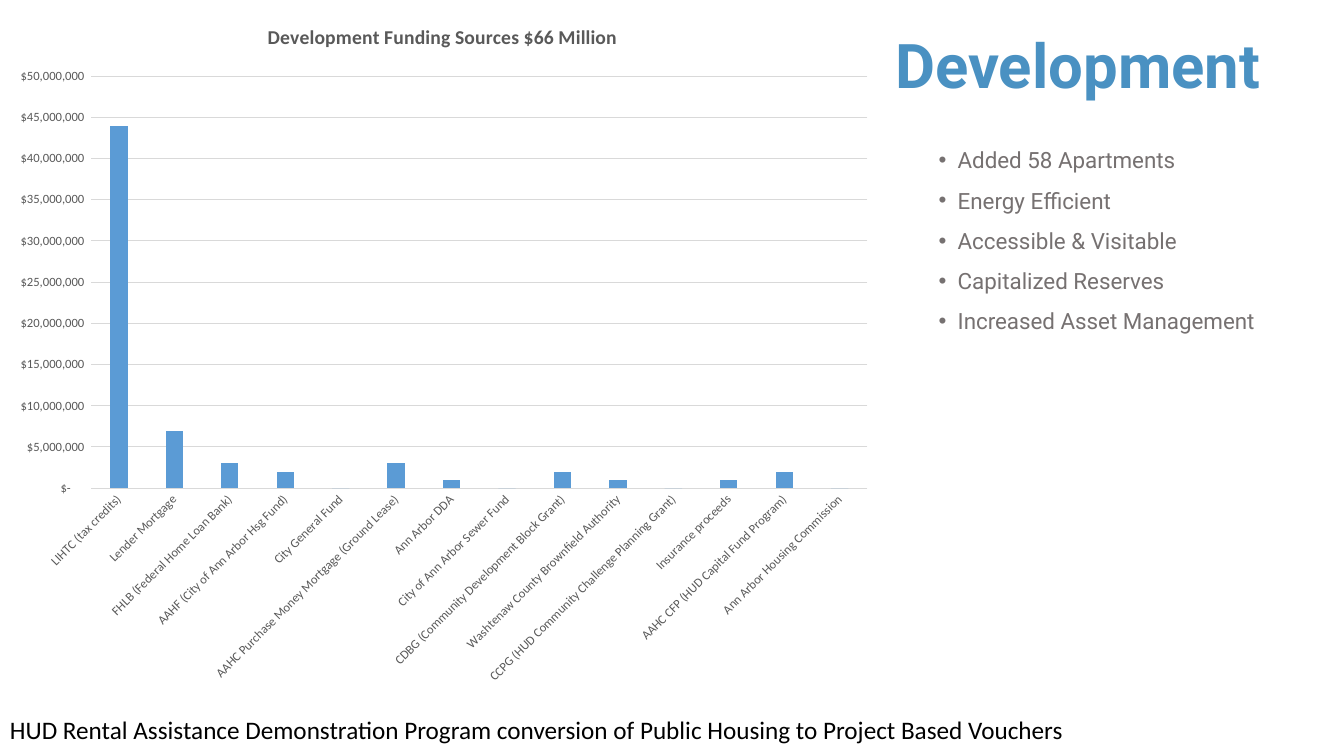
from dataclasses import dataclass

from lxml import etree
from pptx import Presentation
from pptx.chart.data import CategoryChartData
from pptx.dml.color import RGBColor
from pptx.enum import chart as charts, text as texts
from pptx.oxml import ns
from pptx.util import Inches, Pt


@dataclass(frozen=True)
class Theme:
    body_font: str = "Calibri"
    accent_font: str = "Roboto"
    black: str = "000000"
    heading: str = "4A91C2"
    bullet: str = "767171"
    chart_text: str = "595959"
    grid: str = "D9D9D9"
    bar: str = "5B9BD5"
    heading_size: int = 44
    footer_size: int = 18
    bullet_size: int = 16
    chart_title_size: int = 14
    chart_size: int = 10
    axis_size: int = 9


THEME = Theme()
MILLION = 1_000_000

FUNDING_MILLIONS = {
    "LIHTC (tax credits)": 44,
    "Lender Mortgage": 7,
    "FHLB (Federal Home Loan Bank)": 3,
    "AAHF (City of Ann Arbor Hsg Fund)": 2,
    "City General Fund": 0,
    "AAHC Purchase Money Mortgage (Ground Lease)": 3,
    "Ann Arbor DDA": 1,
    "City of Ann Arbor Sewer Fund": 0,
    "CDBG (Community Development Block Grant)": 2,
    "Washtenaw County Brownfield Authority": 1,
    "CCPG (HUD Community Challenge Planning Grant)": 0,
    "Insurance proceeds": 1,
    "AAHC CFP (HUD Capital Fund Program)": 2,
    "Ann Arbor Housing Commission": 0,
}
RESULTS = (
    "Added 58 Apartments",
    "Energy Efficient",
    "Accessible & Visitable",
    "Capitalized Reserves",
    "Increased Asset Management",
)
ACCOUNTING = r'_("$"* #,##0_);_("$"* \(#,##0\);_("$"* "-"??_);_(@_)'


def style_font(font, size, color, name=THEME.body_font, bold=False):
    font.name, font.size, font.bold = name, Pt(size), bold
    font.color.rgb = RGBColor.from_string(color)


def add_bullet(paragraph, indent=0.19):
    props = paragraph._p.get_or_add_pPr()
    props.set("marL", str(Inches(indent)))
    props.set("indent", str(-Inches(indent)))
    etree.SubElement(props, ns.qn("a:buFont")).set("typeface", "Arial")
    etree.SubElement(props, ns.qn("a:buChar")).set("char", "•")


def add_text(slide, content, box, bullets=False, align=None, spacing=None, **font):
    """Add a text box with one paragraph for each line of content."""
    frame = slide.shapes.add_textbox(*map(Inches, box)).text_frame
    frame.word_wrap = True
    frame.auto_size = texts.MSO_AUTO_SIZE.SHAPE_TO_FIT_TEXT
    frame.text = content
    for paragraph in frame.paragraphs:
        if spacing:
            paragraph.line_spacing = spacing
        paragraph.alignment = align
        if bullets:
            add_bullet(paragraph)
        for run in paragraph.runs:
            style_font(run.font, **font)


def place_plot(chart, **fractions):
    """Fix the inner plot area as fractions of the chart frame."""
    plot_area = chart.element.chart.plotArea
    for old in plot_area.findall(ns.qn("c:layout")):
        plot_area.remove(old)
    layout = etree.Element(ns.qn("c:layout"))
    manual = etree.SubElement(layout, ns.qn("c:manualLayout"))
    settings = {"layoutTarget": "inner", "xMode": "edge", "yMode": "edge", **fractions}
    for tag, value in settings.items():
        etree.SubElement(manual, ns.qn(f"c:{tag}")).set("val", str(value))
    plot_area.insert(0, layout)


def style_line(line, color):
    line.color.rgb = RGBColor.from_string(color)
    line.width = Pt(0.75)


def style_axes(chart):
    sources, dollars = chart.category_axis, chart.value_axis
    for axis in (sources, dollars):
        axis.major_tick_mark = axis.minor_tick_mark = charts.XL_TICK_MARK.NONE
        style_font(axis.tick_labels.font, THEME.axis_size, THEME.chart_text)
    style_line(sources.format.line, THEME.grid)
    label_body = chart.element.xpath(".//c:catAx/c:txPr/a:bodyPr")[0]
    label_body.set("rot", str(-45 * 60000))
    label_body.set("vert", "horz")

    dollars.minimum_scale, dollars.maximum_scale = 0, 50 * MILLION
    dollars.major_unit = 5 * MILLION
    dollars.format.line.fill.background()
    style_line(dollars.major_gridlines.format.line, THEME.grid)
    dollars.tick_labels.number_format = ACCOUNTING
    dollars.tick_labels.number_format_is_linked = False


def add_funding_chart(slide, title, box):
    data = CategoryChartData(number_format=ACCOUNTING)
    data.categories = list(FUNDING_MILLIONS)
    data.add_series("Series 1", [m * MILLION for m in FUNDING_MILLIONS.values()])
    chart = slide.shapes.add_chart(
        charts.XL_CHART_TYPE.COLUMN_CLUSTERED, *map(Inches, box), data
    ).chart
    style_font(chart.font, THEME.chart_size, THEME.black)
    chart.has_legend = False
    chart.has_title = True
    chart.chart_title.include_in_layout = False
    heading = chart.chart_title.text_frame
    heading.text = title
    style_font(heading.paragraphs[0].runs[0].font, THEME.chart_title_size,
               THEME.chart_text, bold=True)

    columns = chart.plots[0]
    columns.gap_width, columns.overlap = 219, -27
    columns.vary_by_categories = False
    fill = columns.series[0].format.fill
    fill.solid()
    fill.fore_color.rgb = RGBColor.from_string(THEME.bar)
    style_axes(chart)
    place_plot(chart, x=0.103, y=0.109, w=0.877, h=0.59)


def main():
    deck = Presentation()
    deck.slide_width, deck.slide_height = Inches(13.33), Inches(7.5)
    slide = deck.slides.add_slide(deck.slide_layouts[6])

    add_text(slide, "HUD Rental Assistance Demonstration Program conversion of "
             "Public Housing to Project Based Vouchers", (0, 7.04, 13.28, 0.4),
             size=THEME.footer_size, color=THEME.black)
    add_funding_chart(slide, "Development Funding Sources $66 Million",
                      (0, 0, 8.78, 6.93))
    add_text(slide, "Development", (8.78, 0.22, 4.56, 0.84), bold=True,
             size=THEME.heading_size, color=THEME.heading, name=THEME.accent_font)
    add_text(slide, "\n".join(RESULTS), (9.21, 1.27, 3.69, 2.39), bullets=True,
             align=texts.PP_ALIGN.JUSTIFY, spacing=1.5, size=THEME.bullet_size,
             color=THEME.bullet, name=THEME.accent_font)
    deck.save("out.pptx")


if __name__ == "__main__":
    main()
